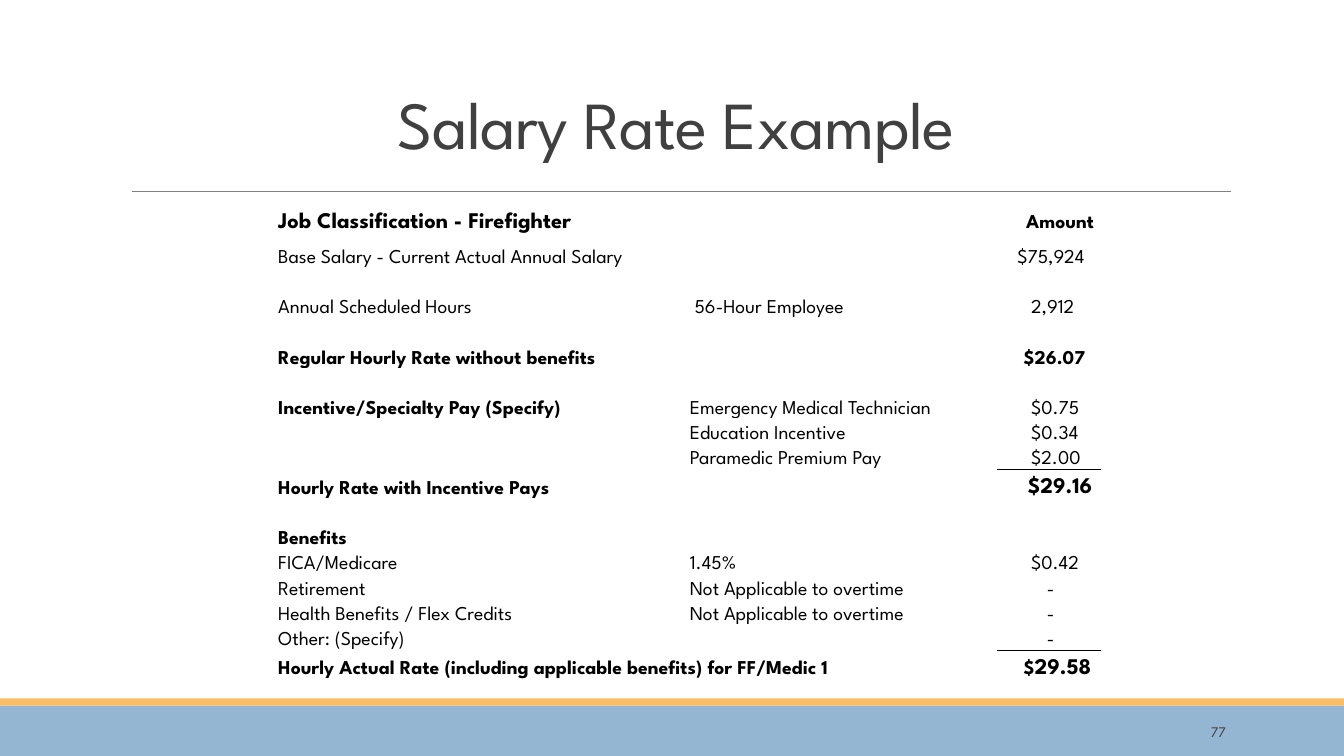
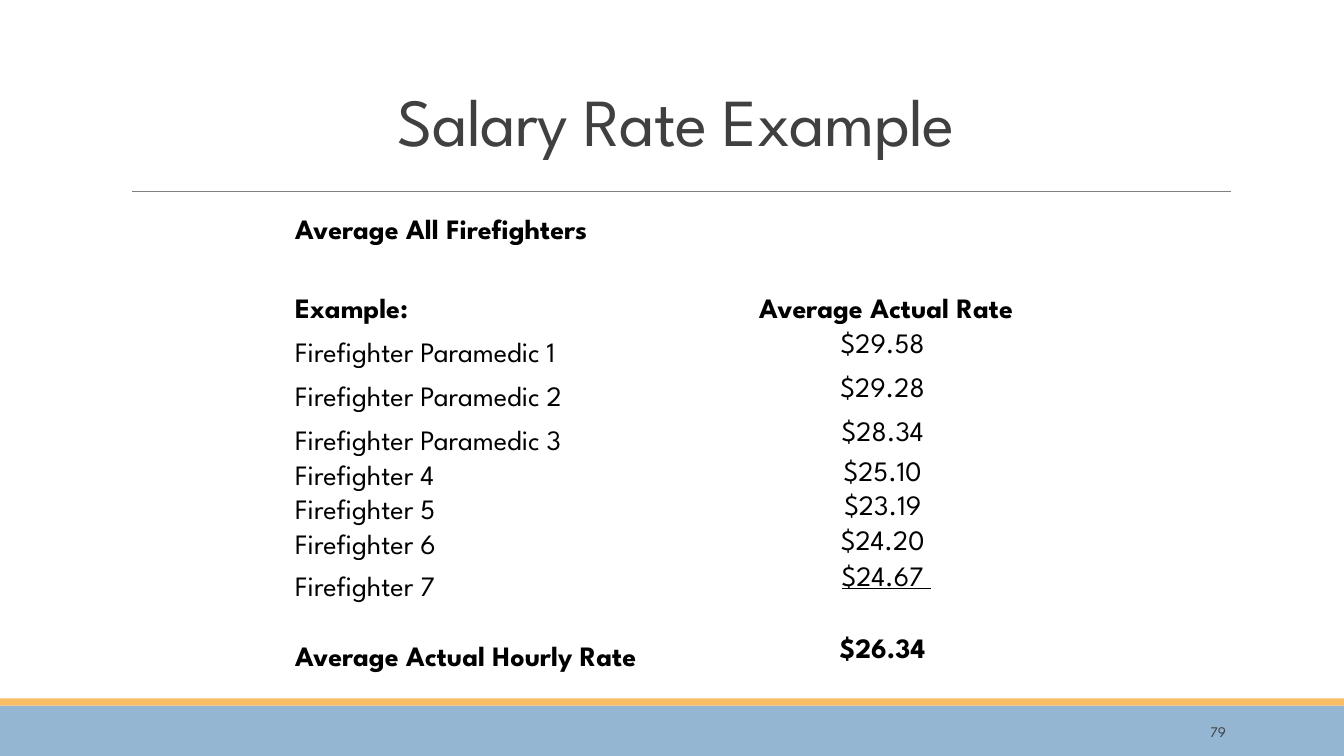
from dataclasses import dataclass

from lxml.etree import SubElement
from pptx import Presentation
from pptx.dml.color import RGBColor
from pptx.enum.shapes import MSO_CONNECTOR, MSO_SHAPE
from pptx.enum.text import MSO_ANCHOR, PP_ALIGN
from pptx.oxml import parse_xml
from pptx.oxml.ns import nsdecls, qn
from pptx.util import Pt

PIXEL = 9525
FONT = "League Spartan"
COLORS = {
    "band": "94B6D2",
    "stripe": "F9BD66",
    "rule": "808080",
    "heading": "404040",
    "text": "000000",
}


@dataclass
class Entry:
    """One table cell: its text and how it is set."""
    text: str = ""
    size: float = 0
    bold: bool = False
    underline: bool = False
    align: PP_ALIGN = PP_ALIGN.LEFT
    anchor: MSO_ANCHOR = MSO_ANCHOR.BOTTOM
    left: int = 1
    right: int = 1
    bottom: int = 0
    large_tail: str = ""


def px(*lengths):
    return [length * PIXEL for length in lengths]


def color(name):
    return RGBColor.from_string(COLORS[name])


def set_format(target, values):
    for name, value in values.items():
        setattr(target, name, value)


def add_run(paragraph, text, size, color_name, **values):
    run = paragraph.add_run()
    run.text = text
    set_format(run.font, {"name": FONT, "size": Pt(size), **values})
    run.font.color.rgb = color(color_name)
    return run


def add_text(slide, box, text, size, align, anchor, line_spacing=1.0):
    frame = slide.shapes.add_textbox(*px(*box)).text_frame
    set_format(frame, {"word_wrap": True, "vertical_anchor": anchor})
    paragraph = frame.paragraphs[0]
    set_format(paragraph, {"alignment": align, "line_spacing": line_spacing})
    return add_run(paragraph, text, size, "heading")


# Shared frame: bands, rule, title, slide number
def add_frame(presentation, title, title_box, number):
    slide = presentation.slides.add_slide(presentation.slide_layouts[6])
    for name, box in {"band": (0, 672, 1280, 48), "stripe": (0, 665, 1280, 7)}.items():
        shape = slide.shapes.add_shape(MSO_SHAPE.RECTANGLE, *px(*box))
        shape.shadow.inherit = False
        shape.fill.solid()
        shape.fill.fore_color.rgb = color(name)
        shape.line.fill.background()
    rule = slide.shapes.add_connector(MSO_CONNECTOR.STRAIGHT, *px(126, 182, 1172, 182))
    rule.line.color.rgb = color("rule")
    rule.line.width = Pt(0.5)
    SubElement(rule._element.spPr, qn("a:effectLst"))
    heading = add_text(slide, title_box, title, 48, PP_ALIGN.CENTER, MSO_ANCHOR.BOTTOM, 0.85)
    heading._r.get_or_add_rPr().set("spc", "-50")
    add_text(slide, (1040, 678, 137, 38), number, 10.5, PP_ALIGN.RIGHT, MSO_ANCHOR.MIDDLE)
    return slide


def fill_cell(cell, entry, size):
    left, right, top, bottom = px(entry.left, entry.right, 1, entry.bottom)
    set_format(cell, {
        "margin_left": left, "margin_right": right, "margin_top": top,
        "margin_bottom": bottom, "vertical_anchor": entry.anchor,
    })
    cell.fill.background()
    paragraph = cell.text_frame.paragraphs[0]
    paragraph.alignment = entry.align
    if not entry.text:
        SubElement(paragraph._p, qn("a:endParaRPr"), sz=str(size * 100))
        return
    values = {"bold": entry.bold, "underline": entry.underline}
    add_run(paragraph, entry.text, entry.size or size, "text", **values)
    if entry.large_tail:
        add_run(paragraph, entry.large_tail, size + 2, "text", **values)


def add_border(cell, side):
    line = parse_xml(
        f'<a:{side} {nsdecls("a")} w="6350"><a:solidFill>'
        f'<a:srgbClr val="{COLORS["text"]}"/></a:solidFill></a:{side}>'
    )
    cell._tc.get_or_add_tcPr().insert(0, line)


def add_rate_table(slide, left, top, widths, heights, rows, size):
    box = px(left, top, sum(widths), sum(heights))
    table = slide.shapes.add_table(len(rows), len(widths), *box).table
    set_format(table, {"first_row": False, "horz_banding": False})
    for column, width in zip(table.columns, px(*widths)):
        column.width = width
    for row, height, entries in zip(table.rows, px(*heights), rows):
        row.height = height
        for cell, entry in zip(row.cells, entries):
            fill_cell(cell, entry, size)
    return table


# Salary slide: pay, incentives and benefits of one employee
def build_salary_slide(presentation):
    slide = add_frame(presentation, "Salary Rate Example", (192, 56, 904, 104), "77")
    blank = Entry()
    spacer = (blank, blank, blank)

    def line(label, detail="", amount="", indent=32):
        return Entry(label), Entry(detail), Entry(amount, left=indent)

    def total(label, amount="", indent=25, **values):
        return Entry(label, bold=True), blank, Entry(amount, bold=True, left=indent, **values)

    rows = [
        (Entry("Job Classification - Firefighter", size=16, bold=True), blank,
         Entry(" Amount ", bold=True, align=PP_ALIGN.RIGHT)),
        line("Base Salary - Current Actual Annual Salary", "", "$75,924", 19),
        spacer,
        line("Annual Scheduled Hours", " 56-Hour Employee", "2,912"),
        spacer,
        total("Regular Hourly Rate without benefits", "$26.07"),
        spacer,
        (Entry("Incentive/Specialty Pay (Specify)", bold=True),
         *line("", "Emergency Medical Technician", "$0.75")[1:]),
        line("", "Education Incentive", "$0.34"),
        line("", "Paramedic Premium Pay", "$2.00"),
        total("Hourly Rate with Incentive Pays", "$29.16", 29, size=16),
        spacer,
        total("Benefits"),
        line("FICA/Medicare", "1.45%", "$0.42"),
        line("Retirement", "Not Applicable to overtime", "-", 47),
        line("Health Benefits / Flex Credits", "Not Applicable to overtime", "-", 47),
        line("Other: (Specify)", "", "-", 47),
        total("Hourly Actual Rate (including applicable benefits) for FF/Medic 1",
              "$", large_tail="29.58"),
    ]
    heights = [33] * 2 + [24] * 8 + [28] + [24] * 6 + [28]
    table = add_rate_table(slide, 264, 189, (392, 294, 98), heights, rows, 14)
    table.cell(17, 0).merge(table.cell(17, 1))
    # Sum lines above the two totals
    for total_row in (10, 17):
        add_border(table.cell(total_row - 1, 2), "lnB")
        add_border(table.cell(total_row, 2), "lnT")


# Average slide: rates of all firefighters
def build_average_slide(presentation):
    slide = add_frame(presentation, "Salary Rate Example", (192, 64, 904, 93), "79")

    def rate(label, amount, label_bottom=0, amount_bottom=0, bold=False, underline=False):
        return (Entry(label, bold=bold, bottom=label_bottom),
                Entry(amount, bold=bold, underline=underline, align=PP_ALIGN.CENTER,
                      anchor=MSO_ANCHOR.MIDDLE, bottom=amount_bottom))

    rows = [
        (Entry("Average All Firefighters", bold=True), Entry()),
        (Entry(), Entry()),
        (Entry("Example:", bold=True),
         Entry(" Average Actual Rate ", bold=True, align=PP_ALIGN.CENTER)),
        rate("Firefighter Paramedic 1", "$29.58 "),
        rate("Firefighter Paramedic 2", "$29.28 "),
        rate("Firefighter Paramedic 3", "$28.34 "),
        rate("Firefighter 4", "$25.10 "),
        rate("Firefighter 5", "$23.19 "),
        rate("Firefighter 6", "$24.20 "),
        rate("Firefighter 7", "$24.67 ", 25, 30, underline=True),
        rate("Average Actual Hourly Rate", "$26.34 ", bold=True),
    ]
    heights = [42, 33] + [42] * 4 + [33] * 3 + [65, 42]
    add_rate_table(slide, 280, 192, (408, 312), heights, rows, 20)


def main():
    presentation = Presentation()
    width, height = px(1280, 720)
    set_format(presentation, {"slide_width": width, "slide_height": height})
    build_salary_slide(presentation)
    build_average_slide(presentation)
    presentation.save("out.pptx")


if __name__ == "__main__":
    main()
